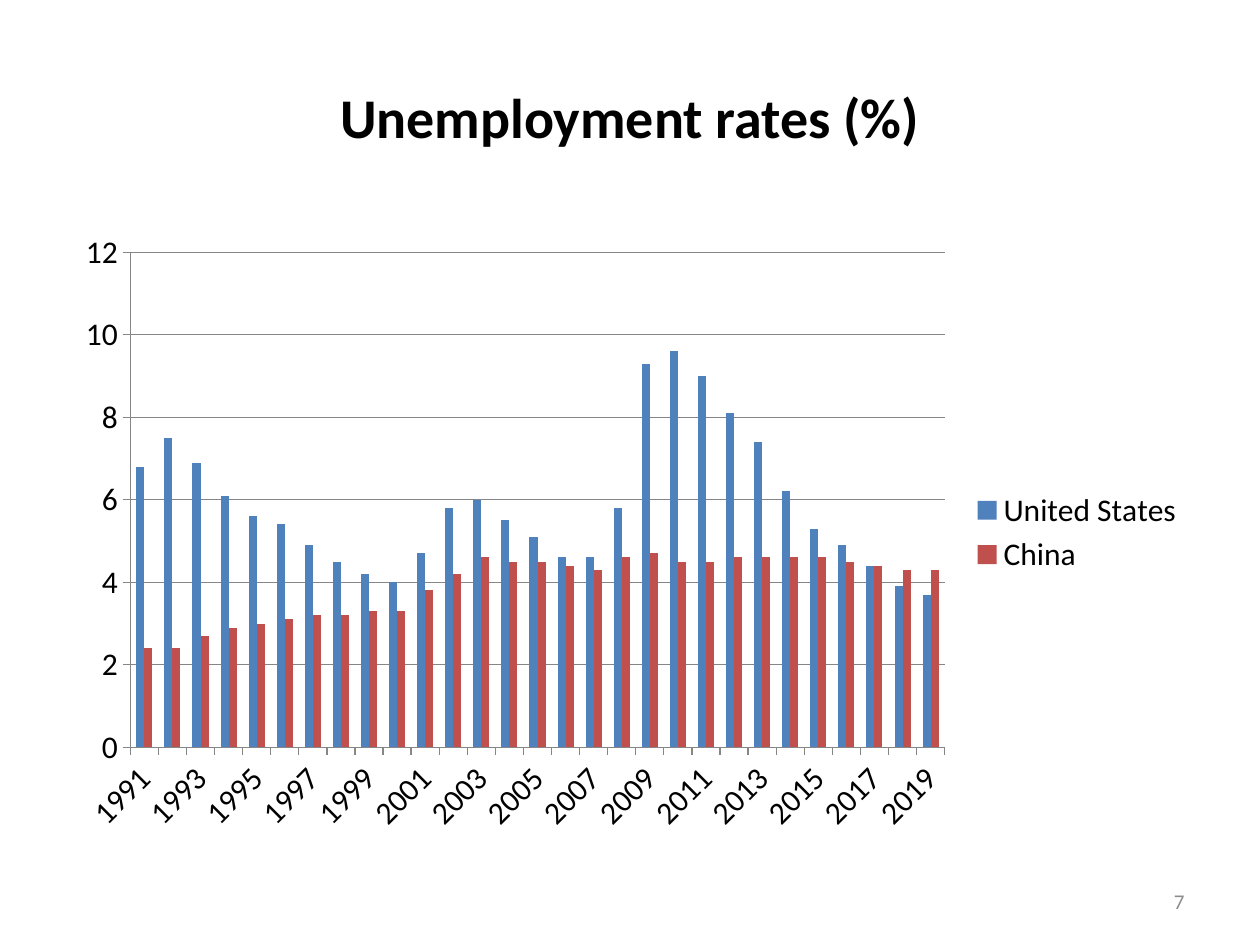
from pptx import Presentation
from pptx import util as u
from pptx.chart import data
from pptx.dml import color
from pptx.enum import chart as ch, text

BLACK = color.RGBColor(0x00, 0x00, 0x00)
GREY = color.RGBColor(0x8C, 0x8C, 0x8C)
AXIS_GREY = color.RGBColor(0x86, 0x86, 0x86)
BLUE = color.RGBColor(0x4F, 0x81, 0xBD)
RED = color.RGBColor(0xC0, 0x50, 0x4D)
FONT = "Calibri"

FIRST_YEAR, LAST_YEAR = 1991, 2019
RATES = {
    "United States": (BLUE, [
        6.8, 7.5, 6.9, 6.1, 5.6, 5.4, 4.9, 4.5, 4.2, 4,
        4.7, 5.8, 6, 5.5, 5.1, 4.6, 4.6, 5.8, 9.3, 9.6,
        9, 8.1, 7.4, 6.2, 5.3, 4.9, 4.4, 3.9, 3.7]),
    "China": (RED, [
        2.4, 2.4, 2.7, 2.9, 3, 3.1, 3.2, 3.2, 3.3, 3.3,
        3.8, 4.2, 4.6, 4.5, 4.5, 4.4, 4.3, 4.6, 4.7, 4.5,
        4.5, 4.6, 4.6, 4.6, 4.6, 4.5, 4.4, 4.3, 4.3]),
}


def style_font(font, size, rgb, bold=False):
    font.name = FONT
    font.size = u.Pt(size)
    font.bold = bold
    font.color.rgb = rgb


def fill_text(frame, words, size, rgb, align, bold=False):
    frame.text = words
    frame.word_wrap = True
    frame.vertical_anchor = text.MSO_ANCHOR.MIDDLE
    paragraph = frame.paragraphs[0]
    paragraph.alignment = align
    style_font(paragraph.runs[0].font, size, rgb, bold)


def place_heading(slide, left, top, width, height):
    heading = slide.shapes.title
    heading.left, heading.top = left, top
    heading.width, heading.height = width, height
    fill_text(heading.text_frame, "Unemployment rates (%)", 32, BLACK,
              text.PP_ALIGN.CENTER, bold=True)


def style_axis(axis):
    axis.major_tick_mark = ch.XL_TICK_MARK.OUTSIDE
    axis.minor_tick_mark = ch.XL_TICK_MARK.NONE
    axis.format.line.color.rgb = AXIS_GREY
    axis.format.line.width = u.Pt(0.75)
    style_font(axis.tick_labels.font, 18, BLACK)


def place_rates_chart(slide, left, top, width, height):
    rates = data.CategoryChartData()
    rates.categories = [str(year) for year in range(FIRST_YEAR, LAST_YEAR + 1)]
    for country, (_, values) in RATES.items():
        rates.add_series(country, values)
    chart = slide.shapes.add_chart(
        ch.XL_CHART_TYPE.COLUMN_CLUSTERED, left, top, width, height, rates).chart
    chart.has_title = False
    style_font(chart.font, 18, BLACK)

    columns = chart.plots[0]
    columns.gap_width = 150
    columns.overlap = 0
    columns.vary_by_categories = False
    for series, (rgb, _) in zip(columns.series, RATES.values()):
        series.format.fill.solid()
        series.format.fill.fore_color.rgb = rgb
        series.invert_if_negative = False

    years, percent = chart.category_axis, chart.value_axis
    for axis in (years, percent):
        style_axis(axis)
    years.has_major_gridlines = False
    percent.minimum_scale, percent.maximum_scale = 0, 12
    percent.major_unit = 2
    percent.has_major_gridlines = True
    gridline = percent.major_gridlines.format.line
    gridline.color.rgb = AXIS_GREY
    gridline.width = u.Pt(0.75)

    chart.has_legend = True
    chart.legend.position = ch.XL_LEGEND_POSITION.RIGHT
    chart.legend.include_in_layout = False
    style_font(chart.legend.font, 18, BLACK)


def place_page_number(slide, left, top, width, height):
    page_number = slide.shapes.add_textbox(left, top, width, height)
    fill_text(page_number.text_frame, "7", 12, GREY, text.PP_ALIGN.RIGHT)


def main():
    deck = Presentation()
    deck.slide_width, deck.slide_height = u.Cm(25.4), u.Cm(19.05)
    slide = deck.slides.add_slide(deck.slide_layouts[5])
    margin = u.Cm(1.27)
    content_width = deck.slide_width - 2 * margin
    number_width = u.Cm(5.93)
    place_heading(slide, margin, u.Cm(0.76), content_width, u.Cm(3.18))
    place_rates_chart(slide, margin, u.Cm(4.45), content_width, u.Cm(12.57))
    place_page_number(slide, deck.slide_width - margin - number_width,
                      u.Cm(17.66), number_width, u.Cm(1.01))
    deck.save("out.pptx")


if __name__ == "__main__":
    main()
